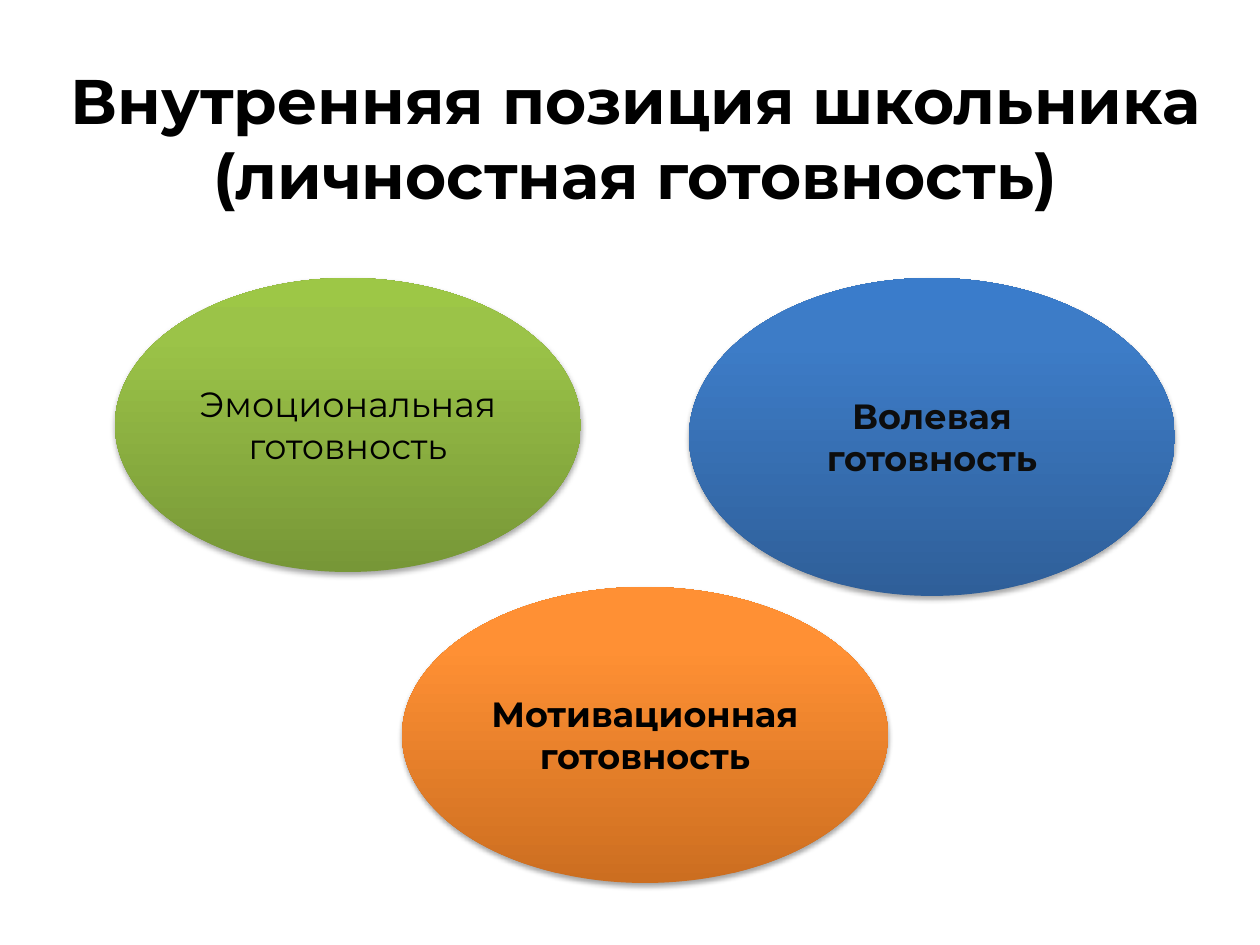
from copy import deepcopy
from lxml.etree import SubElement
from pptx import Presentation
from pptx.dml.color import RGBColor
from pptx.enum.shapes import MSO_SHAPE as Shape
from pptx.enum.text import MSO_ANCHOR as Anchor, MSO_AUTO_SIZE as Fit, PP_ALIGN as Align
from pptx.oxml.ns import qn
from pptx.util import Pt

SCALE = 914400 / 126
FONT = "Montserrat"
OVALS = [
    ("Эмоциональная готовность", (115, 278, 466, 294),
     ("779737", "9BC348", "9DC746"), "000000", False),
    ("Волевая готовность", (689, 278, 486, 318),
     ("2F5F99", "3D7CC7", "3A7CCB"), "0D0D0D", True),
    ("Мотивационная готовность", (402, 587, 486, 296),
     ("CC6E20", "FF9034", "FF9136"), "000000", True),
]


def px(num):
    """Turn pixels into EMU."""
    return round(num * SCALE)


def color(code):
    """Turn a hex string into a colour."""
    return RGBColor.from_string(code)


def add_run(para, text, size, code, bold):
    """Add one formatted run to a paragraph."""
    run = para.add_run()
    run.text = text
    font = run.font
    font.name, font.size, font.bold = FONT, Pt(size), bold
    font.color.rgb = color(code)


def add_title(slide, lines, box):
    """Fill and place the title, with one run for each line."""
    title = slide.shapes.title
    title.left, title.top, title.width, title.height = map(px, box)
    frame = title.text_frame
    frame.word_wrap, frame.auto_size = True, Fit.NONE
    frame.vertical_anchor = Anchor.TOP
    para = frame.paragraphs[0]
    para.alignment = Align.CENTER
    for num, line in enumerate(lines):
        if num:
            para.add_line_break()
        add_run(para, line, 36, "000000", True)


def set_blend(shape, codes):
    """Give a shape a three-stop blend that runs upwards."""
    fill = shape.fill
    fill.gradient()
    fill.gradient_angle = 90
    stops = shape._element.spPr.find(".//" + qn("a:gsLst"))
    stops.append(deepcopy(stops[-1]))
    for stop, place, code in zip(fill.gradient_stops, (0, 0.8, 1), codes):
        stop.position = place
        stop.color.rgb = color(code)


def add_shadow(shape):
    """Add a soft shadow below a shape."""
    shape.shadow.inherit = False
    effects = shape._element.spPr.find(qn("a:effectLst"))
    outer = SubElement(effects, qn("a:outerShdw"), blurRad=str(Pt(3.1)),
                       dist=str(Pt(1.8)), dir="5400000", rotWithShape="0")
    black = SubElement(outer, qn("a:srgbClr"), val="000000")
    SubElement(black, qn("a:alpha"), val="35000")


def add_oval(slide, text, box, codes, ink, bold):
    """Add a shaded oval with centred text."""
    oval = slide.shapes.add_shape(Shape.OVAL, *map(px, box))
    set_blend(oval, codes)
    oval.line.fill.background()
    add_shadow(oval)
    frame = oval.text_frame
    frame.word_wrap, frame.vertical_anchor = True, Anchor.MIDDLE
    para = frame.paragraphs[0]
    para.alignment = Align.CENTER
    add_run(para, text, 20, ink, bold)


def main():
    """Build and save the slide."""
    deck = Presentation()
    deck.slide_width, deck.slide_height = px(1260), px(945)
    slide = deck.slides.add_slide(deck.slide_layouts[5])
    add_title(slide, ("Внутренняя позиция школьника", "(личностная готовность)"),
              (30, 55, 1211, 165))
    for oval in OVALS:
        add_oval(slide, *oval)
    deck.save("out.pptx")


if __name__ == "__main__":
    main()
